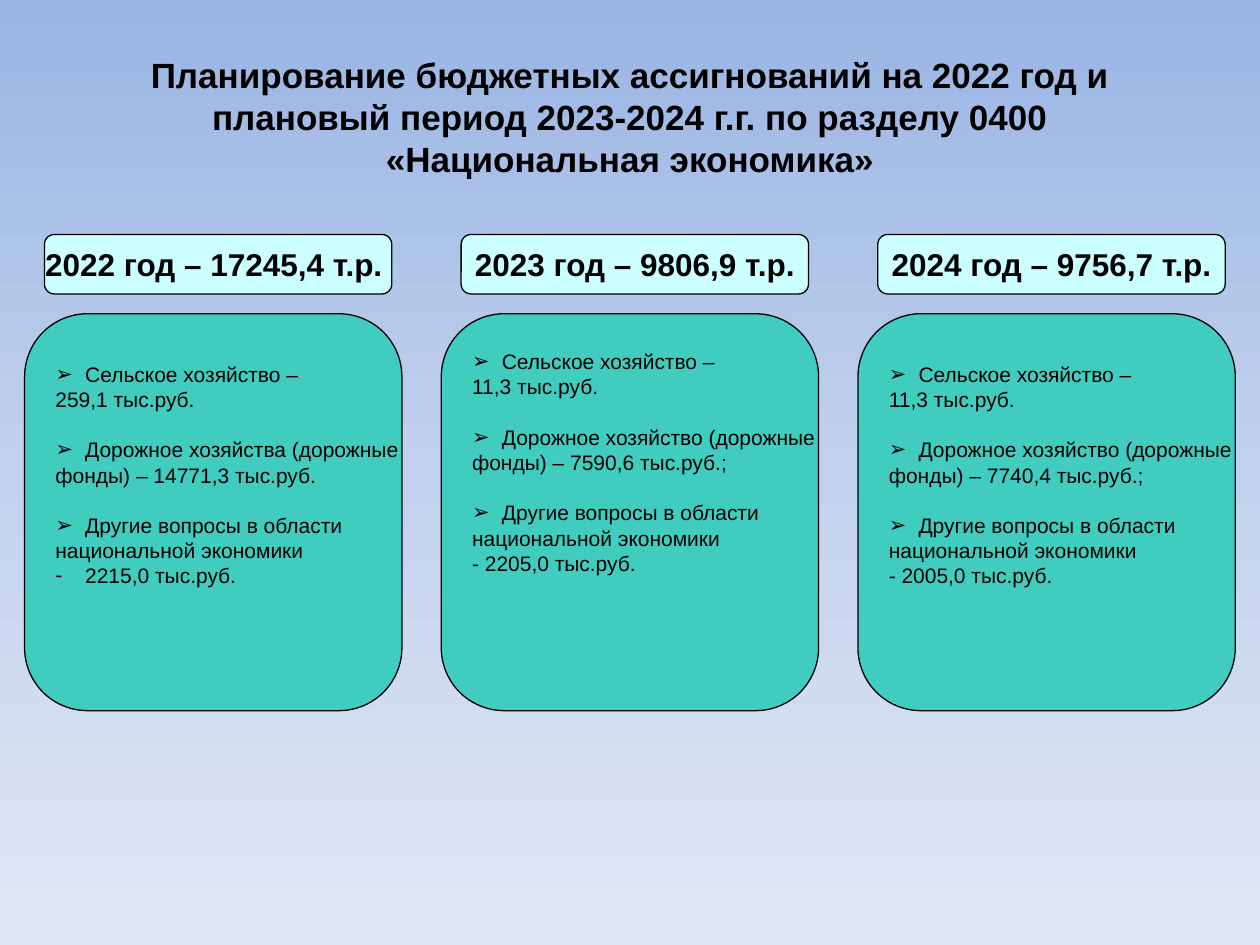
import copy

import pptx
import pptx.dml.color
import pptx.enum.shapes
import pptx.enum.text
import pptx.oxml.ns
import pptx.util
from lxml import etree

Pt = pptx.util.Pt
ALIGN = pptx.enum.text.PP_ALIGN
ANCHOR = pptx.enum.text.MSO_ANCHOR


def color(value):
    return pptx.dml.color.RGBColor.from_string(value)


def apply(target, values):
    for name, value in values.items():
        setattr(target, name, value)


class SlideStyle:
    font = "Arial"
    ink = "000000"
    line_height = 14.4
    bullet_indent = 17

    def __init__(self, slide):
        self.slide = slide

    def background(self, stops):
        fill = self.slide.background.fill
        fill.gradient()
        fill.gradient_angle = 270
        first = fill.gradient_stops[0]._gs
        first.addnext(copy.deepcopy(first))
        for stop, (position, value) in zip(fill.gradient_stops, stops):
            stop.position = position
            stop.color.rgb = color(value)

    def add_text(self, para, text, size, bold=False):
        span = para.add_run()
        span.text = text
        apply(span.font, {"name": self.font, "size": Pt(size), "bold": bold})
        span.font.color.rgb = color(self.ink)

    def bullet(self, para, mark):
        props = para._p.get_or_add_pPr()
        props.set("marL", str(Pt(self.bullet_indent)))
        props.set("indent", str(-Pt(self.bullet_indent)))
        etree.SubElement(props, pptx.oxml.ns.qn("a:buFont"), typeface=self.font)
        etree.SubElement(props, pptx.oxml.ns.qn("a:buChar"), char=mark)

    def title(self, text, left, top, width, height):
        box = self.slide.shapes.add_textbox(Pt(left), Pt(top), Pt(width), Pt(height))
        apply(box.text_frame, {"word_wrap": True, "vertical_anchor": ANCHOR.MIDDLE})
        para = box.text_frame.paragraphs[0]
        para.alignment = ALIGN.CENTER
        self.add_text(para, text, 20, bold=True)

    def rounded_box(self, fill, left, top, width, height):
        box = self.slide.shapes.add_shape(
            pptx.enum.shapes.MSO_SHAPE.ROUNDED_RECTANGLE,
            Pt(left), Pt(top), Pt(width), Pt(height))
        box.shadow.inherit = False
        box.fill.solid()
        box.fill.fore_color.rgb = color(fill)
        box.line.color.rgb = color(self.ink)
        box.line.width = Pt(0.75)
        box.text_frame.word_wrap = False
        return box

    def header(self, text, *place):
        box = self.rounded_box("CCFFFF", *place)
        box.text_frame.vertical_anchor = ANCHOR.MIDDLE
        para = box.text_frame.paragraphs[0]
        para.alignment = ALIGN.CENTER
        self.add_text(para, text, 18, bold=True)

    def card(self, items, inset, *place):
        frame = self.rounded_box("40CCBF", *place).text_frame
        apply(frame, {"vertical_anchor": ANCHOR.TOP, "margin_top": Pt(inset)})
        for index, (mark, text) in enumerate(items):
            para = frame.add_paragraph() if index else frame.paragraphs[0]
            para.alignment = ALIGN.LEFT
            if index and mark == "➢":
                para.space_before = Pt(self.line_height)
            if mark:
                self.bullet(para, mark)
            self.add_text(para, text, 12)


def main():
    deck = pptx.Presentation()
    apply(deck, {"slide_width": Pt(720), "slide_height": Pt(540)})
    page = SlideStyle(deck.slides.add_slide(deck.slide_layouts[6]))

    # Background and title
    page.background([(0, "9AB5E4"), (0.5, "C2D1ED"), (1, "E1E8F5")])
    page.title("Планирование бюджетных ассигнований на 2022 год и плановый период "
               "2023-2024 г.г. по разделу 0400 «Национальная экономика»",
               36, 21.6, 648, 90)

    # One column per year: header, farming, roads, other spending, top inset
    years = [
        ("2022 год – 17245,4 т.р. ", "259,1 тыс.руб.", "Дорожное хозяйства (дорожные",
         "фонды) – 14771,3 тыс.руб.", ("-", "2215,0 тыс.руб."), 16.6),
        ("2023 год – 9806,9 т.р.", "11,3 тыс.руб.", "Дорожное хозяйство (дорожные",
         "фонды) – 7590,6 тыс.руб.;", ("", "- 2205,0 тыс.руб."), 9.4),
        ("2024 год – 9756,7 т.р.", "11,3 тыс.руб.", "Дорожное хозяйство (дорожные",
         "фонды) – 7740,4 тыс.руб.;", ("", "- 2005,0 тыс.руб."), 16.6),
    ]
    for column, (heading, farming, roads, funds, other, inset) in enumerate(years):
        left = 14.1 + 238.1 * column
        page.header(heading, left + 11.3, 134, 198.5, 34)
        items = [("➢", "Сельское хозяйство –"), ("", farming),
                 ("➢", roads), ("", funds),
                 ("➢", "Другие вопросы в области"), ("", "национальной экономики"),
                 other]
        page.card(items, inset, left, 179.3, 215.6, 226.8)

    deck.save("out.pptx")


if __name__ == "__main__":
    main()
